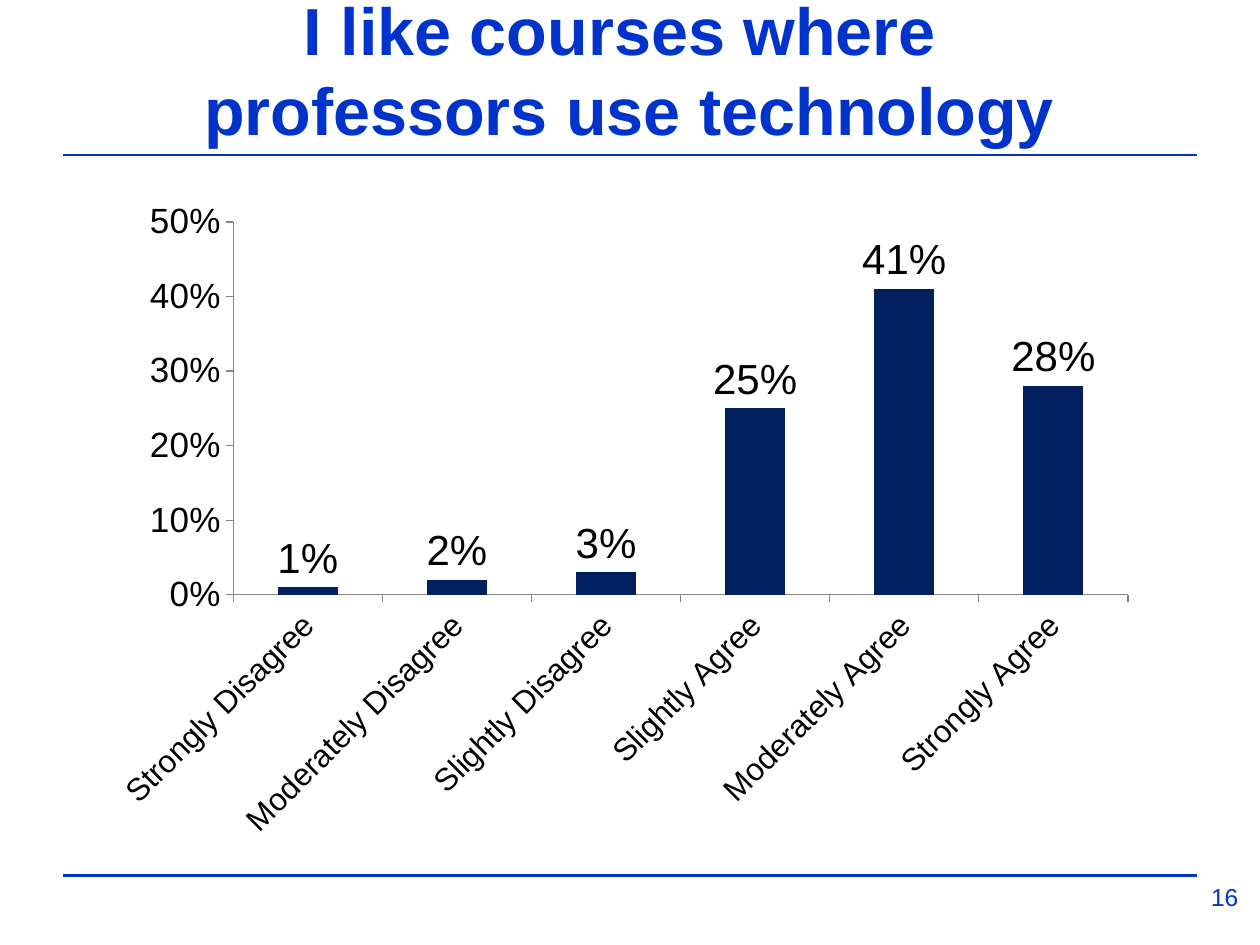
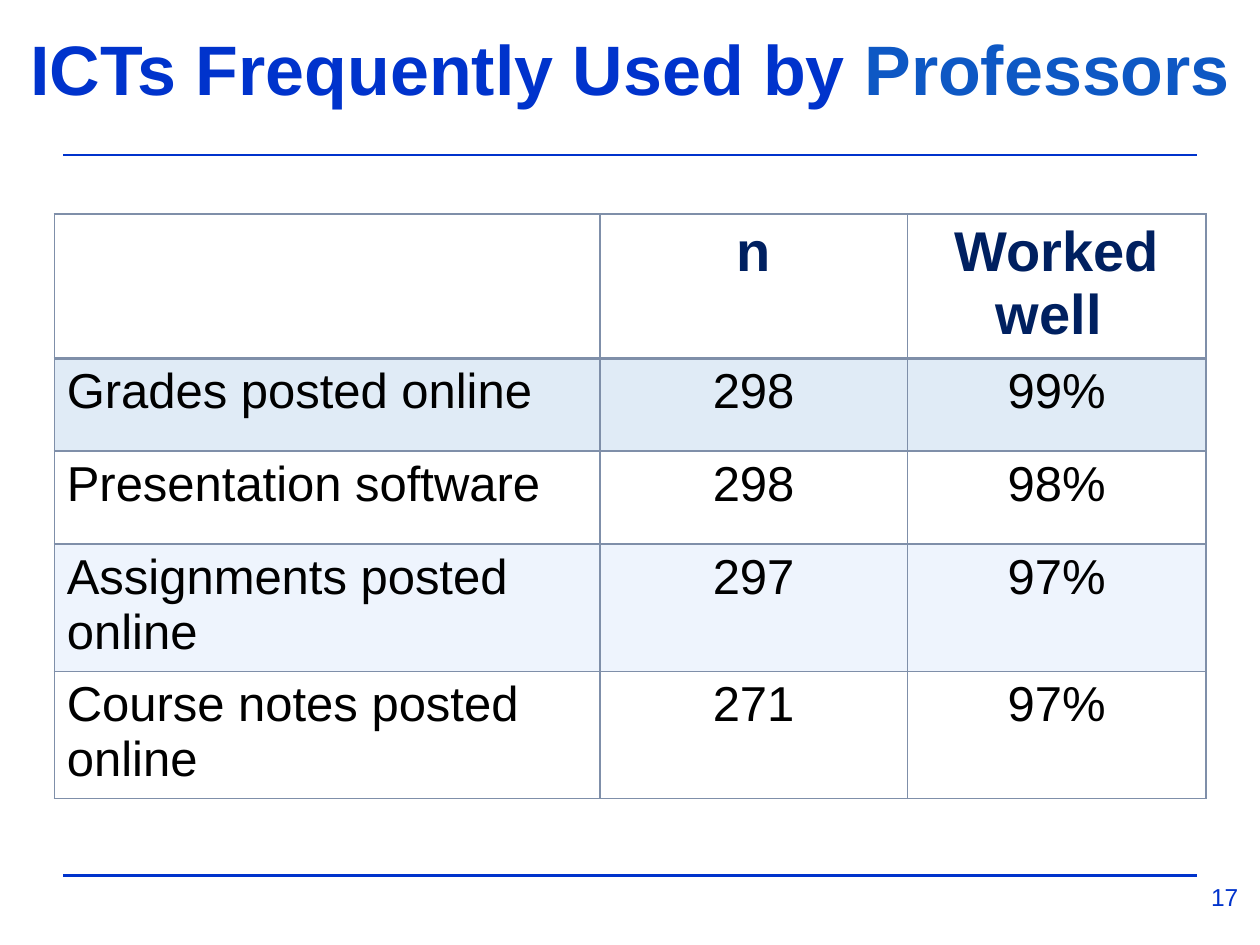
"""Build two survey slides: a column chart of opinions and a table of tools used."""
import dataclasses

import lxml.etree
import pptx
import pptx.chart.data
import pptx.dml.color
import pptx.enum.chart
import pptx.enum.shapes
import pptx.enum.text
import pptx.oxml.ns
import pptx.slide
import pptx.table
import pptx.text.text
import pptx.util

Pt = pptx.util.Pt
qn = pptx.oxml.ns.qn
ALIGN = pptx.enum.text.PP_ALIGN
FONT = "Arial"
BLUE, LIGHT_BLUE, NAVY = "0033CC", "0E58C4", "002060"
BLACK, AXIS_GREY, BORDER = "000000", "868686", "7F8FA9"
RULE_HEIGHTS = (88.5, 500.4)
RULE_LEFT, RULE_RIGHT = 36, 684


@dataclasses.dataclass(frozen=True)
class Area:
    left: float
    top: float
    width: float
    height: float

    def lengths(self) -> tuple:
        return tuple(Pt(value) for value in dataclasses.astuple(self))


@dataclasses.dataclass(frozen=True)
class Span:
    text: str
    color: str = BLUE
    starts_line: bool = False


@dataclasses.dataclass(frozen=True)
class TableRow:
    texts: tuple[str, str, str]
    height: float
    fill: str = ""
    opacity: int = 100
    header: bool = False


PAGE_NUMBER_AREA = Area(679.7, 500.4, 40.3, 30.2)
CHART_AREA = Area(65.5, 111.6, 589.7, 391)
PLOT_SHARES = {"x": 0.115, "y": 0.039, "w": 0.867, "h": 0.545}
OPINIONS = {
    "Strongly Disagree": 0.01,
    "Moderately Disagree": 0.02,
    "Slightly Disagree": 0.03,
    "Slightly Agree": 0.25,
    "Moderately Agree": 0.41,
    "Strongly Agree": 0.28,
}
COLUMN_WIDTHS = (311.8, 175.7, 170.6)
TOOL_ROWS = (
    TableRow(("", "n", "Worked well "), 78.8, header=True),
    TableRow(("Grades posted online", "298", "99%"), 53.2, "E0EBF6"),
    TableRow(("Presentation software", "298", "98%"), 53.2),
    TableRow(("Assignments posted online", "297", "97%"), 69.7, "ACCBF9", 20),
    TableRow(("Course notes posted online", "271", "97%"), 69.7),
)


def rgb(value: str) -> pptx.dml.color.RGBColor:
    return pptx.dml.color.RGBColor.from_string(value)


def style_font(font: pptx.text.text.Font, size: float, color: str, bold: bool = False) -> None:
    font.name, font.size, font.bold = FONT, Pt(size), bold
    font.color.rgb = rgb(color)


def add_text(page: pptx.slide.Slide, area: Area, spans: list[Span], size: float,
             bold: bool = False, anchor: str = "TOP") -> None:
    box = page.shapes.add_textbox(*area.lengths())
    frame = box.text_frame
    frame.word_wrap = True
    frame.margin_left = frame.margin_right = 0
    frame.vertical_anchor = pptx.enum.text.MSO_ANCHOR[anchor]
    para = frame.paragraphs[0]
    para.alignment = ALIGN.CENTER
    style_font(para.font, size, spans[0].color, bold)
    for span in spans:
        if span.starts_line:
            para.add_line_break()
        run = para.add_run()
        run.text = span.text
        if span.color != spans[0].color:
            run.font.color.rgb = rgb(span.color)


def add_rule(page: pptx.slide.Slide, top: float) -> None:
    rule = page.shapes.add_connector(pptx.enum.shapes.MSO_CONNECTOR.STRAIGHT,
                                     Pt(RULE_LEFT), Pt(top), Pt(RULE_RIGHT), Pt(top))
    rule.line.color.rgb = rgb(BLUE)
    rule.line.width = Pt(1.5)
    lxml.etree.SubElement(rule._element.spPr, qn("a:effectLst"))


def add_page(deck: pptx.presentation.Presentation, number: int, title_area: Area,
             title: list[Span], title_size: float) -> pptx.slide.Slide:
    page = deck.slides.add_slide(deck.slide_layouts[6])
    for top in RULE_HEIGHTS:
        add_rule(page, top)
    add_text(page, title_area, title, title_size, bold=True, anchor="BOTTOM")
    add_text(page, PAGE_NUMBER_AREA, [Span(str(number))], 14)
    return page


def place_plot(chart: pptx.chart.chart.Chart) -> None:
    plot_area = chart._chartSpace.chart.plotArea
    for old in plot_area.findall(qn("c:layout")):
        plot_area.remove(old)
    layout = lxml.etree.Element(qn("c:layout"))
    plot_area.insert(0, layout)
    manual = lxml.etree.SubElement(layout, qn("c:manualLayout"))
    settings = {"layoutTarget": "inner", "xMode": "edge", "yMode": "edge", **PLOT_SHARES}
    for name, value in settings.items():
        lxml.etree.SubElement(manual, qn(f"c:{name}")).set("val", str(value))


def add_opinion_chart(page: pptx.slide.Slide) -> None:
    chart_data = pptx.chart.data.CategoryChartData(number_format="0%")
    chart_data.categories = list(OPINIONS)
    chart_data.add_series("Series 1", list(OPINIONS.values()))
    kinds = pptx.enum.chart
    chart = page.shapes.add_chart(kinds.XL_CHART_TYPE.COLUMN_CLUSTERED,
                                  *CHART_AREA.lengths(), chart_data).chart
    chart.has_title = chart.has_legend = False
    style_font(chart.font, 10, BLACK)
    for axis, size in ((chart.category_axis, 18), (chart.value_axis, 20)):
        axis.has_major_gridlines = False
        axis.major_tick_mark = kinds.XL_TICK_MARK.OUTSIDE
        axis.minor_tick_mark = kinds.XL_TICK_MARK.NONE
        axis.format.line.color.rgb = rgb(AXIS_GREY)
        axis.format.line.width = Pt(0.75)
        style_font(axis.tick_labels.font, size, BLACK)
    chart.category_axis._element.find(f"{qn('c:txPr')}/{qn('a:bodyPr')}").set("rot", "-2700000")
    values = chart.value_axis
    values.minimum_scale, values.maximum_scale, values.major_unit = 0, 0.5, 0.1
    values.tick_labels.number_format = "0%"
    values.tick_labels.number_format_is_linked = False
    plot = chart.plots[0]
    plot.gap_width = 150
    plot.vary_by_categories = False
    columns = plot.series[0].format.fill
    columns.solid()
    columns.fore_color.rgb = rgb(NAVY)
    plot.has_data_labels = True
    labels = plot.data_labels
    labels.show_value = True
    labels.number_format, labels.number_format_is_linked = "0%", False
    labels.position = kinds.XL_LABEL_POSITION.OUTSIDE_END
    style_font(labels.font, 24, BLACK)
    place_plot(chart)


def style_cell(cell: pptx.table._Cell, row: TableRow, row_index: int) -> None:
    properties = cell._tc.get_or_add_tcPr()
    if row.fill:
        cell.fill.solid()
        cell.fill.fore_color.rgb = rgb(row.fill)
        if row.opacity < 100:
            color = properties.find(f"{qn('a:solidFill')}/{qn('a:srgbClr')}")
            lxml.etree.SubElement(color, qn("a:alpha")).set("val", str(row.opacity * 1000))
    else:
        cell.fill.background()
    widths = {"L": 1, "R": 1, "T": 2 if row_index == 1 else 1, "B": 2 if row.header else 1}
    for position, (side, width) in enumerate(widths.items()):
        border = lxml.etree.Element(qn(f"a:ln{side}"), w=str(Pt(width)))
        fill = lxml.etree.SubElement(border, qn("a:solidFill"))
        lxml.etree.SubElement(fill, qn("a:srgbClr")).set("val", BORDER)
        properties.insert(position, border)


def add_tool_table(page: pptx.slide.Slide) -> None:
    area = Area(31, 122.4, sum(COLUMN_WIDTHS), sum(row.height for row in TOOL_ROWS))
    table = page.shapes.add_table(len(TOOL_ROWS), len(COLUMN_WIDTHS), *area.lengths()).table
    table.first_row = table.horz_banding = False
    for column, width in zip(table.columns, COLUMN_WIDTHS):
        column.width = Pt(width)
    for row_index, row in enumerate(TOOL_ROWS):
        table.rows[row_index].height = Pt(row.height)
        for column_index, text in enumerate(row.texts):
            cell = table.cell(row_index, column_index)
            cell.margin_bottom = Pt(1.8)
            style_cell(cell, row, row_index)
            if not text:
                continue
            cell.text = text
            para = cell.text_frame.paragraphs[0]
            para.alignment = ALIGN.CENTER if column_index else ALIGN.LEFT
            style_font(para.font, 32 if row.header else 28,
                       NAVY if row.header else BLACK, row.header)


def main() -> None:
    deck = pptx.Presentation()
    deck.slide_width, deck.slide_height = Pt(720), Pt(540)
    opinion_title = [Span("I like courses where "),
                     Span("professors use technology", starts_line=True)]
    add_opinion_chart(add_page(deck, 16, Area(31, 15.1, 657.4, 73.5), opinion_title, 38))
    tool_title = [Span("ICTs Frequently Used by "), Span("Professors", LIGHT_BLUE)]
    add_tool_table(add_page(deck, 17, Area(8.6, 12.2, 702.8, 54), tool_title, 40))
    deck.save("out.pptx")


if __name__ == "__main__":
    main()
